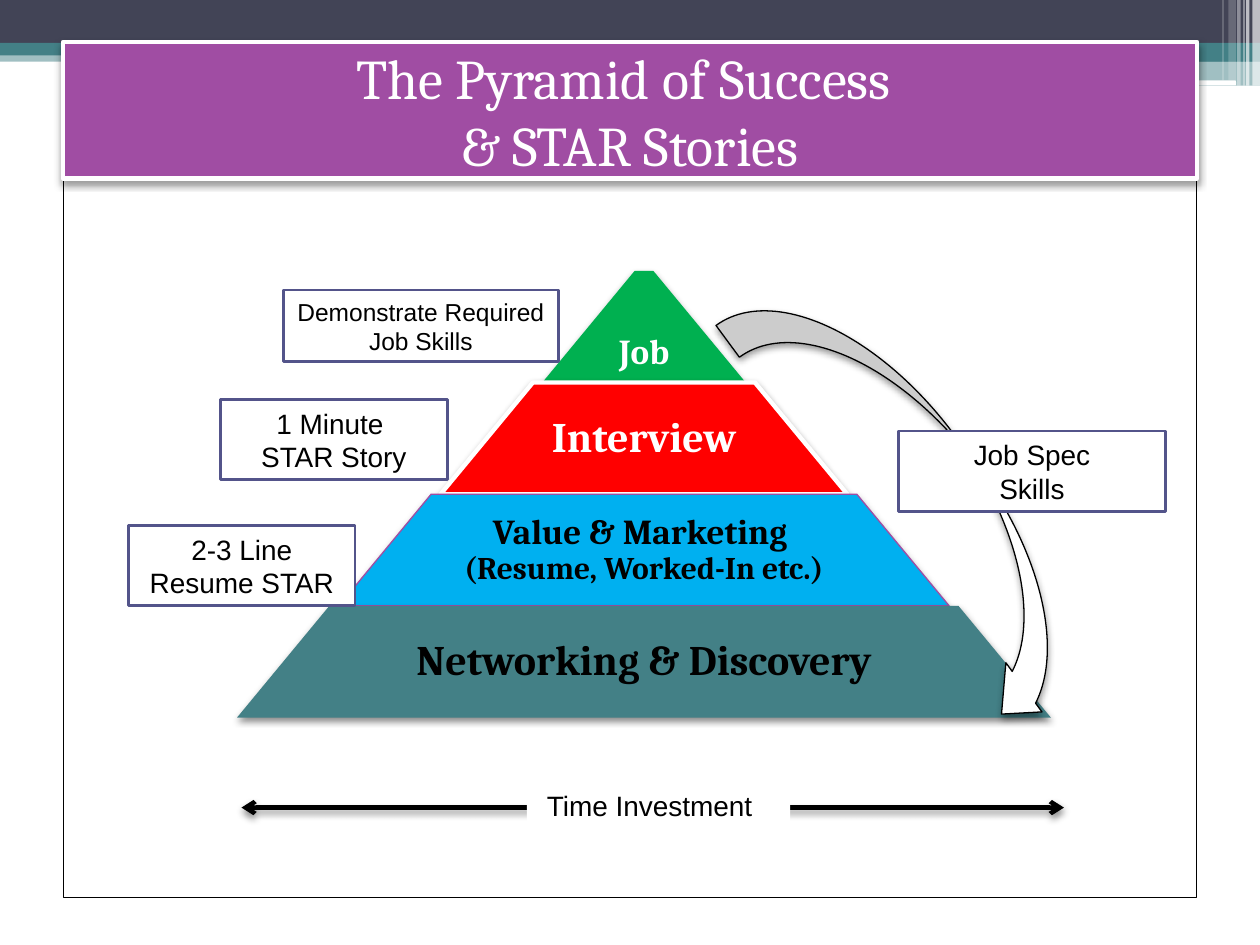
from lxml.etree import SubElement as Sub
from pptx import Presentation
from pptx.dml.color import RGBColor as Rgb
from pptx.enum.shapes import MSO_CONNECTOR as Link, MSO_SHAPE as Kind
from pptx.enum.text import MSO_ANCHOR as Anchor, MSO_AUTO_SIZE as Fit, PP_ALIGN as Align
from pptx.oxml.ns import qn
from pptx.util import Pt

HUES = {
    "white": "FFFFFF", "black": "000000", "navy": "424456", "teal": "438086",
    "purple": "A04DA3", "green": "00B050", "red": "FF0000", "blue": "00B0F0",
    "indigo": "53548A",
}


class Deck:
    """Holds the style and the current slide; every length is in points."""

    serif, sans = "Cambria", "Arial"

    def __init__(self, prs):
        self.slide = prs.slides.add_slide(prs.slide_layouts[5])
        self.shapes = self.slide.shapes

    def hue(self, name):
        return Rgb.from_string(HUES[name])

    def shade(self, props, alpha):
        """Adds a soft shadow that falls straight down."""
        glow = Sub(props.find(qn("a:effectLst")), qn("a:outerShdw"), blurRad=str(Pt(4)),
                   dist=str(Pt(2)), dir="5400000", rotWithShape="0")
        tint = Sub(glow, qn("a:srgbClr"), val=HUES["black"])
        Sub(tint, qn("a:alpha"), val=str(alpha * 1000))

    def paint(self, shape, fill, line=None, alpha=100, shadow=0):
        shape.fill.solid()
        shape.fill.fore_color.rgb = self.hue(fill)
        props = shape.element.spPr
        if alpha < 100:
            tint = props.find(".//" + qn("a:srgbClr"))
            Sub(tint, qn("a:alpha"), val=str(alpha * 1000))
        if line:
            shape.line.color.rgb = self.hue(line[0])
            shape.line.width = Pt(line[1])
        else:
            shape.line.fill.background()
        shape.shadow.inherit = False
        if shadow:
            self.shade(props, shadow)

    def box(self, area, fill, kind=Kind.RECTANGLE, adj=(), **look):
        shape = self.shapes.add_shape(kind, *map(Pt, area))
        for i, value in enumerate(adj):
            shape.adjustments[i] = value
        self.paint(shape, fill, **look)
        return shape

    def words(self, shape, text, sizes, font, color="black", bold=False, align=Align.CENTER):
        """Sets the text; the last size holds for all further runs."""
        frame = shape.text_frame
        frame.word_wrap = True
        frame.vertical_anchor = Anchor.MIDDLE
        frame.text = text
        runs = []
        for para in frame.paragraphs:
            para.alignment = align
            runs += para.runs
        for i, run in enumerate(runs):
            run.font.name = font
            run.font.size = Pt(sizes[min(i, len(sizes) - 1)])
            run.font.bold = bold
            run.font.color.rgb = self.hue(color)
        return frame

    def title(self, area, text):
        head = self.shapes.title
        self.shapes.element.append(head.element)  # in front of the backdrop
        head.left, head.top, head.width, head.height = map(Pt, area)
        self.paint(head, "purple", line=("white", 2.5), shadow=40)
        self.words(head, text, [32], self.serif, "white").auto_size = Fit.NONE

    def tier(self, area, text, sizes, fill, color, line, shadow, drop):
        left, top, width, height = area
        self.box(area, fill, Kind.TRAPEZOID, [0.827], line=line, shadow=shadow)
        span = width if drop else width * 0.65
        label = self.shapes.add_textbox(
            *map(Pt, (left + (width - span) / 2, top, span, height)))
        frame = self.words(label, text, sizes, self.serif, color, bold=True)
        frame.margin_left = frame.margin_right = frame.margin_bottom = Pt(2)
        frame.margin_top = Pt(2 + drop)
        for para in frame.paragraphs:
            para.line_spacing = 0.9

    def label(self, area, text, size=16):
        shape = self.box(area, "white", line=("indigo", 1.5))
        self.words(shape, text, [size], self.sans)

    def arrow(self, x1, x2, y):
        """Draws a level line with an arrowhead at both ends."""
        line = self.shapes.add_connector(Link.STRAIGHT, *map(Pt, (x1, y, x2, y)))
        line.line.color.rgb = self.hue("black")
        line.line.width = Pt(2.5)
        props = line.element.spPr
        for end in ("a:headEnd", "a:tailEnd"):
            Sub(props.find(qn("a:ln")), qn(end), type="arrow")
        Sub(props, qn("a:effectLst"))
        self.shade(props, 45)


BANDS = [
    ((0, 28.8, 720, 6.5), "teal", 50),
    ((0, 0, 720, 24.5), "navy", 100),
    ((0, 24.5, 720, 7.2), "teal", 100),
    ((426, 28, 294, 7.2), "teal", 100),
    ((426, 34.6, 294, 14.4), "teal", 50),
]
# left, width, height, alpha
STRIPES = [
    (715.7, 4.3, 49, 65), (712, 2, 49, 65), (710.5, 0.7, 49, 60),
    (707, 2, 49, 40), (702, 4.3, 46, 20), (698.5, 0.7, 46, 30),
]
# text, sizes, fill, text colour, line, shadow, text drop
TIERS = [
    ("Job", [20], "green", "white", None, 45, 30),
    ("Interview", [24], "red", "white", ("white", 2.5), 40, 0),
    ("Value & Marketing \v(Resume, Worked-In etc.)", [20, 18], "blue", "black",
     ("purple", 0.75), 40, 0),
    ("Networking & Discovery", [24], "teal", "black", None, 45, 0),
]
MID, PEAK, STEP, RISE = 368, 154.8, 116.25, 63.8


def main():
    prs = Presentation()
    prs.slide_width, prs.slide_height = Pt(720), Pt(540)
    deck = Deck(prs)

    for area, fill, alpha in BANDS:
        deck.box(area, fill, alpha=alpha)
    deck.box((580.3, 46, 126, 2.9), "white", Kind.ROUNDED_RECTANGLE)
    for left, width, height, alpha in STRIPES:
        deck.box((left, 0, width, height), "white", alpha=alpha)
    deck.box((36, 26, 648, 487), "white", line=("black", 0.5))
    deck.title((36, 24, 648, 78), "The Pyramid of Success \v& STAR Stories")

    for i, tier in enumerate(TIERS):
        width = STEP * (i + 1)
        deck.tier((MID - width / 2, PEAK + RISE * i, width, RISE), *tier)

    sweep = deck.box((378.7, 246.2, 293, 72.7), "white", Kind.CURVED_DOWN_ARROW,
                     [0.31, 0.479, 0.266], line=("black", 0.75), shadow=40)
    sweep.rotation = 53.7

    deck.arrow(138, 608, 461.5)
    time = deck.box((301, 447, 150.5, 26.6), "white")
    frame = deck.words(time, "Time Investment", [16], deck.sans, align=Align.LEFT)
    frame.margin_left = Pt(11.5)

    deck.label((513.4, 246.2, 152.6, 46), "Job Spec\nSkills")
    deck.label((73.4, 300.2, 129.6, 46), "2-3 Line Resume STAR")
    deck.label((126, 228.2, 129.6, 46), "1 Minute \nSTAR Story")
    deck.label((162, 165.8, 157, 41), "Demonstrate Required Job Skills", 14)

    prs.save("out.pptx")


if __name__ == "__main__":
    main()
